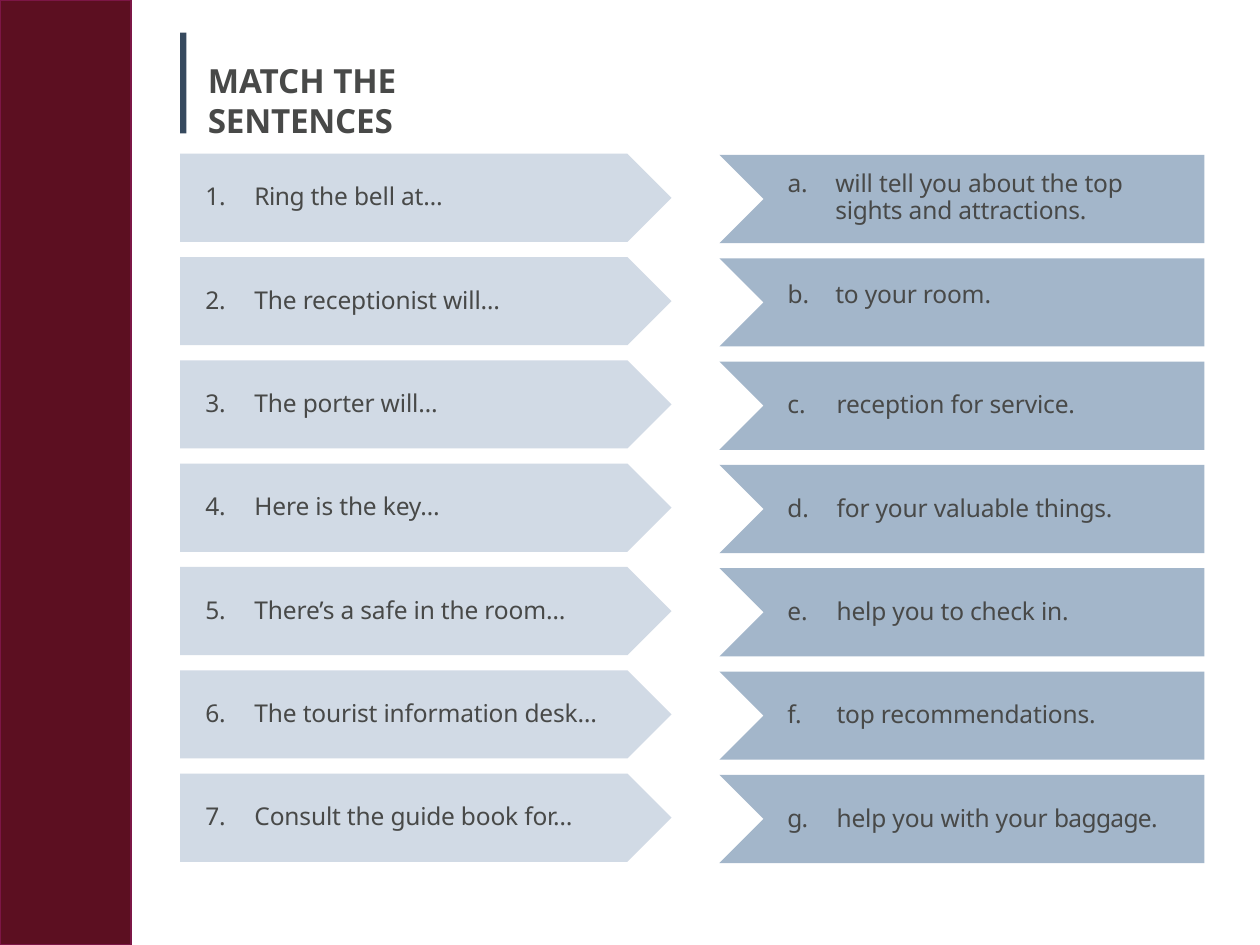
from pptx import Presentation
from pptx.dml.color import RGBColor
from pptx.enum.shapes import MSO_SHAPE
from pptx.enum.text import MSO_AUTO_SIZE
from pptx.oxml.xmlchemy import OxmlElement
from pptx.util import Inches, Pt

COLORS = {
    "ink": "484948",
    "accent": "36495E",
    "prompt": "D1DAE5",
    "ending": "A3B6CA",
    "sidebar": "5C0F21",
    "sidebar_edge": "7C1646",
    "paper": "FFFFFF",
}

PROMPTS = [
    [("1.\t", -0.1), ("Ring ", -0.3), ("the bell at…", -0.1)],
    [("2.\tThe receptionist will…", -0.1)],
    [("3.\tThe porter will…", -0.1)],
    [("4.\tHere is the key…", -0.1)],
    [("5.\tThere’s a safe in the room…", -0.1)],
    [("6.\tThe tourist information desk…", -0.1)],
    [("7.\tConsult the ", -0.1), ("guide ", -0.2), ("book for…", -0.1)],
]
LETTERED_ENDINGS = [
    [("will tell you about the top ", -0.1), ("sights ", -0.2), ("and attractions.", -0.1)],
    [("to your room.", -0.1)],
]
ENDINGS = [
    [("c.\treception for service.", -0.1)],
    [("d.\tfor your valuable ", -0.1), ("things.", -0.2)],
    [("e.\thelp you to check in.", -0.1)],
    [("f.\ttop recommendations.", -0.1)],
    [("g.\t", -0.5), ("help you with your ", -0.1), ("baggage.", -0.4)],
]
PROMPT_TOP, ENDING_TOP = 1.22, 1.23
ROW_PITCH, ROW_HEIGHT, LABEL_DROP = 0.82, 0.7, 0.21


class SlideBuilder:
    font = "Noto Sans"

    def __init__(self, slide):
        self.slide = slide

    def shape(self, kind, left, top, width, height, fill, edge=None):
        block = self.slide.shapes.add_shape(
            kind, Inches(left), Inches(top), Inches(width), Inches(height))
        block.shadow.inherit = False
        block.fill.solid()
        block.fill.fore_color.rgb = RGBColor.from_string(COLORS[fill])
        if edge:
            block.line.color.rgb = RGBColor.from_string(COLORS[edge])
            block.line.width = Pt(1.25)
        else:
            block.line.fill.background()

    def frame(self, left, top, width, height, inset=0.01):
        frame = self.slide.shapes.add_textbox(
            Inches(left), Inches(top), Inches(width), Inches(height)).text_frame
        frame.word_wrap = True
        frame.auto_size = MSO_AUTO_SIZE.SHAPE_TO_FIT_TEXT
        frame.margin_left = frame.margin_right = frame.margin_bottom = 0
        frame.margin_top = Inches(inset)
        return frame

    def indent(self, paragraph, margin, first=None):
        properties = paragraph._p.get_or_add_pPr()
        properties.set("marL", str(Inches(margin)))
        if first is not None:
            properties.set("indent", str(Inches(first)))
        return properties

    def runs(self, paragraph, parts, size=14, bold=False):
        for text, spacing in parts:
            run = paragraph.add_run()
            run.text = text
            run.font.name = self.font
            run.font.size = Pt(size)
            run.font.bold = bold
            run.font.color.rgb = RGBColor.from_string(COLORS["ink"])
            run._r.get_or_add_rPr().set("spc", str(round(spacing * 100)))

    def title(self, left, top, width, height, parts):
        paragraph = self.frame(left, top, width, height).paragraphs[0]
        self.indent(paragraph, 0.01)
        self.runs(paragraph, parts, size=19, bold=True)

    def label(self, left, top, width, parts):
        paragraph = self.frame(left, top, width, 0.26).paragraphs[0]
        tabs = OxmlElement("a:tabLst")
        tab = OxmlElement("a:tab")
        tab.set("pos", str(Inches(0.39)))
        tab.set("algn", "l")
        tabs.append(tab)
        self.indent(paragraph, 0.01).append(tabs)
        self.runs(paragraph, parts)

    def lettered_list(self, left, top, width, height, items, gap):
        frame = self.frame(left, top, width, height, inset=0.04)
        for index, parts in enumerate(items):
            paragraph = frame.add_paragraph() if index else frame.paragraphs[0]
            letter = OxmlElement("a:buAutoNum")
            letter.set("type", "alphaLcPeriod")
            self.indent(paragraph, 0.39, -0.38).append(letter)
            paragraph.line_spacing = Pt(15.1)
            if index:
                paragraph.space_before = Pt(gap)
            self.runs(paragraph, parts)


def main():
    deck = Presentation()
    deck.slide_width, deck.slide_height = Inches(10), Inches(7.5)
    builder = SlideBuilder(deck.slides.add_slide(deck.slide_layouts[6]))

    builder.shape(MSO_SHAPE.RECTANGLE, 1.43, 0.26, 0.05, 0.8, "accent")
    for row, prompt in enumerate(PROMPTS):
        prompt_top = PROMPT_TOP + row * ROW_PITCH
        builder.shape(MSO_SHAPE.PENTAGON, 1.43, prompt_top, 3.9, ROW_HEIGHT, "prompt")
        builder.label(1.62, prompt_top + LABEL_DROP, 3.3, prompt)
        builder.shape(MSO_SHAPE.CHEVRON, 5.71, ENDING_TOP + row * ROW_PITCH,
                      4.21, ROW_HEIGHT, "ending")

    builder.lettered_list(6.24, 1.32, 2.7, 1.2, LETTERED_ENDINGS, gap=33)
    for row, ending in enumerate(ENDINGS, start=len(LETTERED_ENDINGS)):
        builder.label(6.24, ENDING_TOP + row * ROW_PITCH + LABEL_DROP, 3.2, ending)

    builder.title(1.64, 0.47, 2.77, 0.35, [("MATCH ", 0), ("THE SENTENCES", -0.1)])
    builder.shape(MSO_SHAPE.RECTANGLE, 9.56, 1.09, 0.43, 5.91, "paper")
    builder.shape(MSO_SHAPE.RECTANGLE, 0, 0, 1.04, 7.5, "sidebar", "sidebar_edge")
    deck.save("out.pptx")


if __name__ == "__main__":
    main()
